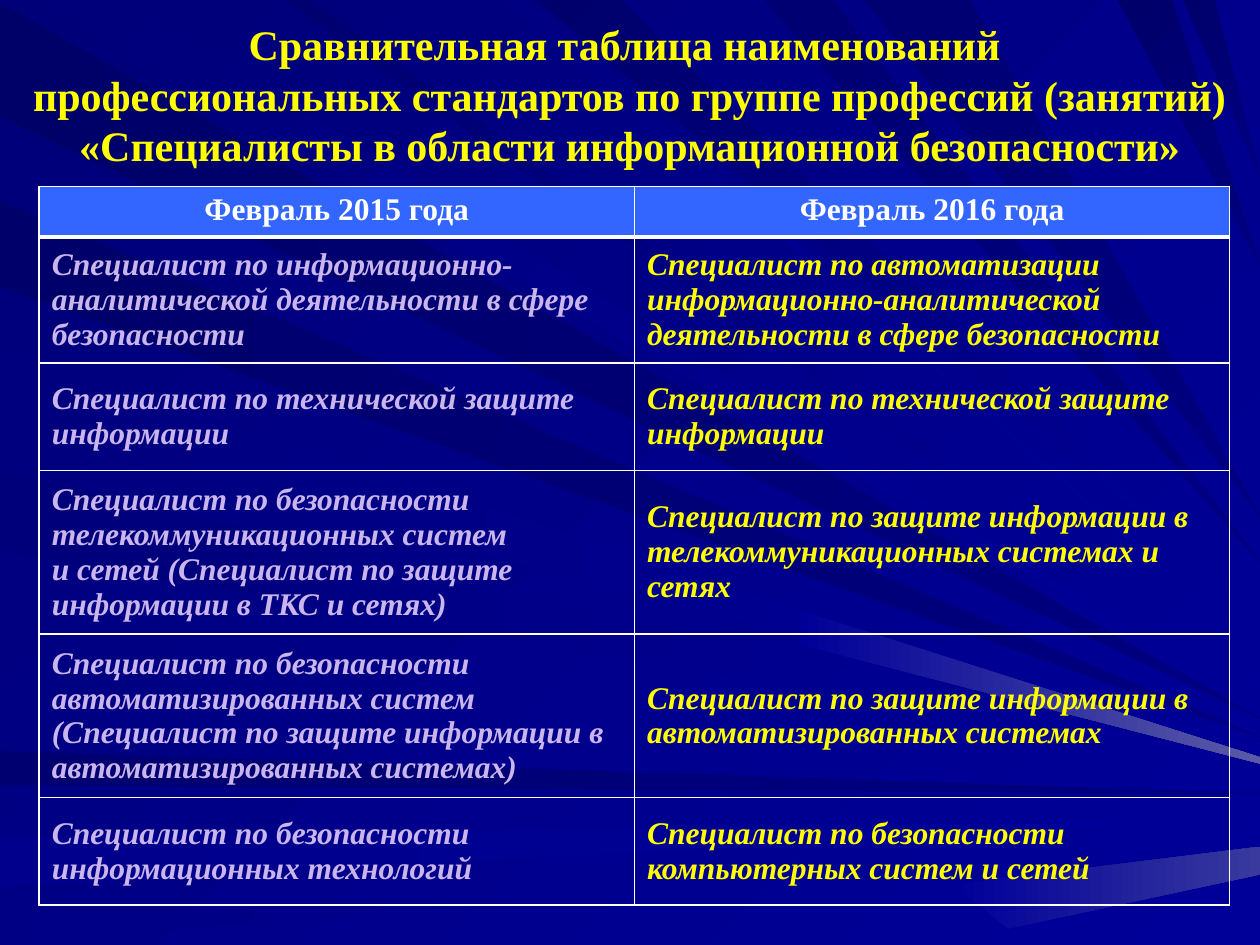
from lxml import etree
from pptx import Presentation
from pptx.dml.color import RGBColor
from pptx.enum.text import MSO_ANCHOR, PP_ALIGN
from pptx.oxml.ns import qn
from pptx.util import Cm, Pt

CENTER, LEFT = PP_ALIGN.CENTER, PP_ALIGN.LEFT
TOP, MIDDLE = MSO_ANCHOR.TOP, MSO_ANCHOR.MIDDLE
TITLE_ONLY = 5
RAY_UNIT = Cm(0.0254)
RIGHT_EDGE = 1000
YELLOW, LILAC, WHITE, BLUE = "FFFF00", "CAB5EC", "FFFFFF", "3366FF"
NAVY, BRIGHT_NAVY = "000080", "000099"

# Rays narrow to a tip on the right edge: two ends on the slide's edge, tip height, colours
LEFT_RAYS = [
    (2, 93, 570, "000069", NAVY),
    (159, 228, 585, "00006B", NAVY),
    (278, 342, 600, "00007E", BRIGHT_NAVY),
    (374, 437, 606, "00007B", BRIGHT_NAVY),
    (596, 623, 630, "000071", NAVY),
    (665, 704, 650, "00008C", BRIGHT_NAVY),
    (735, 750, 662, "000085", BRIGHT_NAVY),
]
TOP_RAYS = [
    (26, 101, 563, "00007B", BRIGHT_NAVY),
    (225, 247, 550, "000070", BRIGHT_NAVY),
    (398, 416, 518, "000083", BRIGHT_NAVY),
    (426, 492, 490, "00006D", BRIGHT_NAVY),
    (606, 661, 446, "000073", NAVY),
    (686, 770, 410, "000073", NAVY),
    (887, 930, 210, "00006B", NAVY),
    (939, 964, 140, "00006D", NAVY),
]
# Light ends of rays on the right edge
GLOWS = [
    ("5A5AA6", [(637, 485), (633, 511), (RIGHT_EDGE, 606), (RIGHT_EDGE, 601)]),
    ("39399E", [(756, 702), (800, 737), (RIGHT_EDGE, 694), (RIGHT_EDGE, 672)]),
]

TITLE_LINES = [
    "Сравнительная таблица наименований ",
    "профессиональных стандартов по группе профессий (занятий) "
    "«Специалисты в области информационной безопасности»",
]

# Row height in centimetres, text of 2015, text of 2016
ROWS = [
    (1.02, "Февраль 2015 года", "Февраль 2016 года"),
    (2.54, "Специалист по информационно-аналитической деятельности в сфере безопасности",
     "Специалист по автоматизации информационно-аналитической деятельности в сфере безопасности"),
    (2.16, "Специалист по технической защите информации",
     "Специалист по технической защите информации"),
    (3.3, "Специалист по безопасности телекоммуникационных систем\v"
     "и сетей (Специалист по защите информации в ТКС и сетях)",
     "Специалист по защите информации в телекоммуникационных системах и сетях"),
    (3.3, "Специалист по безопасности автоматизированных систем "
     "(Специалист по защите информации в автоматизированных системах)",
     "Специалист по защите информации в автоматизированных системах"),
    (2.16, "Специалист по безопасности информационных технологий",
     "Специалист по безопасности компьютерных систем и сетей"),
]


def paint(fill, start, end=None, angle=0):
    """Fill plainly, or with a gradient turned clockwise when an end colour is given."""
    if end is None:
        fill.solid()
        fill.fore_color.rgb = RGBColor.from_string(start)
        return
    fill.gradient()
    fill.gradient_angle = -angle % 360
    for stop, color in zip(fill.gradient_stops, (start, end)):
        stop.color.rgb = RGBColor.from_string(color)


def format_text(frame, alignment, color, font_values):
    for para in frame.paragraphs:
        para.alignment = alignment
        for span in para.runs:
            span.font.color.rgb = RGBColor.from_string(color)
            for name, value in font_values.items():
                setattr(span.font, name, value)


deck = Presentation()
deck.slide_width, deck.slide_height = Cm(25.4), Cm(19.05)
page = deck.slides.add_slide(deck.slide_layouts[TITLE_ONLY])
paint(page.background.fill, "000078", BRIGHT_NAVY, 45)

# Rays behind the text
outlines = [([(0, near), (0, far), (RIGHT_EDGE, tip)], start, end, 0)
            for near, far, tip, start, end in LEFT_RAYS]
outlines += [([(near, 0), (far, 0), (RIGHT_EDGE, tip)], start, end, 45)
             for near, far, tip, start, end in TOP_RAYS]
outlines += [(corners, BRIGHT_NAVY, end, 0) for end, corners in GLOWS]

rays = page.shapes.add_group_shape()
for corners, start, end, angle in outlines:
    builder = rays.shapes.build_freeform(*corners[0], scale=RAY_UNIT)
    builder.add_line_segments(corners[1:], close=True)
    ray = builder.convert_to_shape()
    paint(ray.fill, start, end, angle)
    ray.line.fill.background()
    ray.shadow.inherit = False

# Title
title = page.shapes.title
rays._element.addnext(title._element)
title.left, title.top, title.width, title.height = Cm(0.3), Cm(0.25), Cm(24.79), Cm(3.33)
title.text_frame.text = "\n".join(TITLE_LINES)
title.text_frame.word_wrap = True
title.text_frame.vertical_anchor = TOP
format_text(title.text_frame, CENTER, YELLOW,
            {"name": "Times New Roman", "size": Pt(24), "bold": True})

# Comparison table
table = page.shapes.add_table(len(ROWS), 2, Cm(0.79), Cm(3.76), Cm(24), Cm(14.48)).table
table.horz_banding = False
for row_index, (height, *texts) in enumerate(ROWS):
    table.rows[row_index].height = Cm(height)
    is_header = row_index == 0
    cell_font = {"name": "Times New Roman", "size": Pt(18), "bold": True, "italic": not is_header}
    for column_index, text in enumerate(texts):
        cell = table.cell(row_index, column_index)
        cell.text_frame.text = text
        cell.vertical_anchor = TOP if is_header else MIDDLE
        color = WHITE if is_header else (LILAC, YELLOW)[column_index]
        format_text(cell.text_frame, CENTER if is_header else LEFT, color, cell_font)
        if is_header:
            paint(cell.fill, BLUE)
        else:
            cell.fill.background()

        border_widths = {"a:lnL": 1, "a:lnR": 1,
                         "a:lnT": 3 if row_index == 1 else 1,
                         "a:lnB": 3 if is_header else 1}
        properties = cell._tc.get_or_add_tcPr()
        for position, (tag, width) in enumerate(border_widths.items()):
            border = etree.Element(qn(tag), w=str(Pt(width)))
            fill = etree.SubElement(border, qn("a:solidFill"))
            etree.SubElement(fill, qn("a:srgbClr"), val=WHITE)
            properties.insert(position, border)

deck.save("out.pptx")
